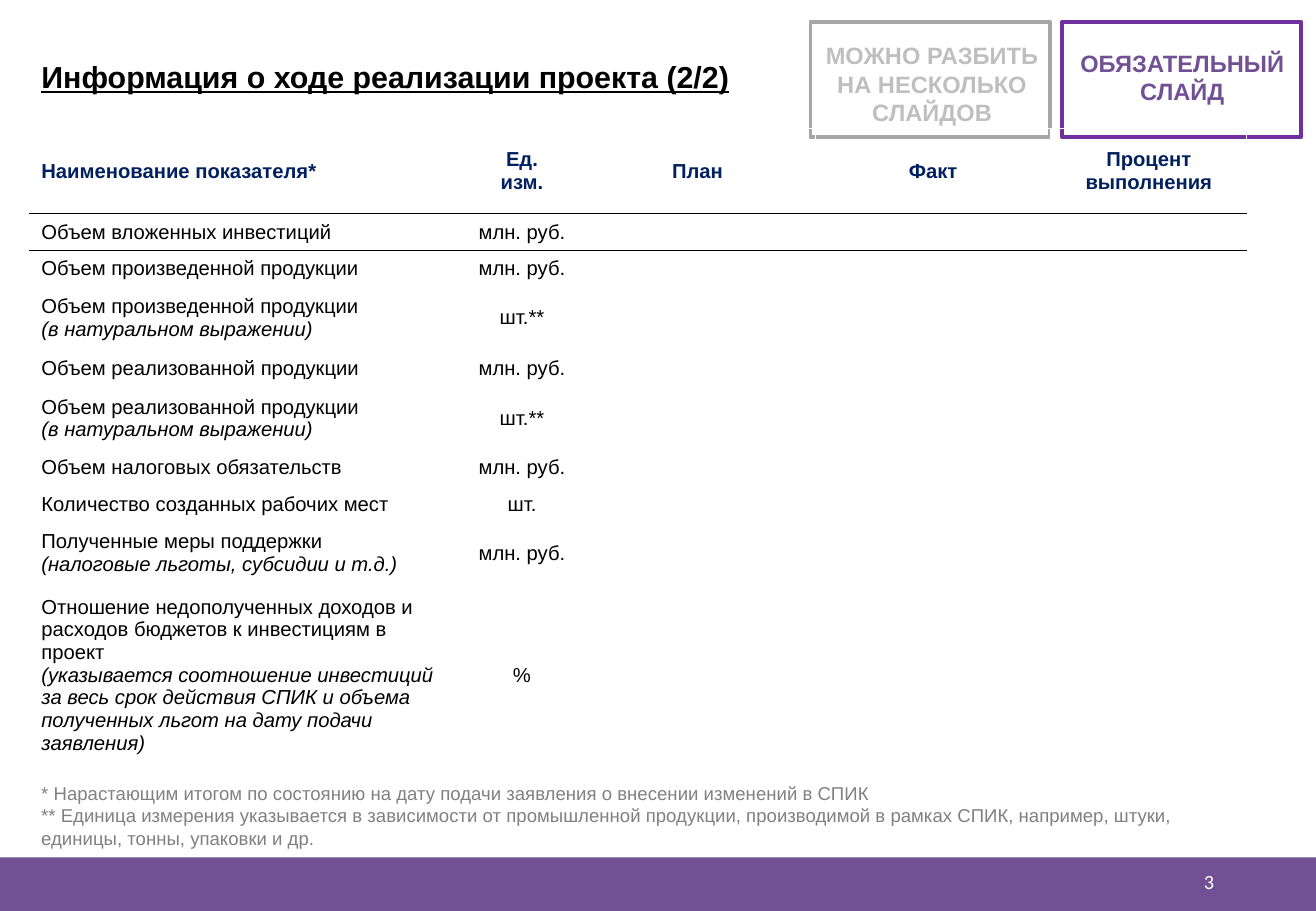
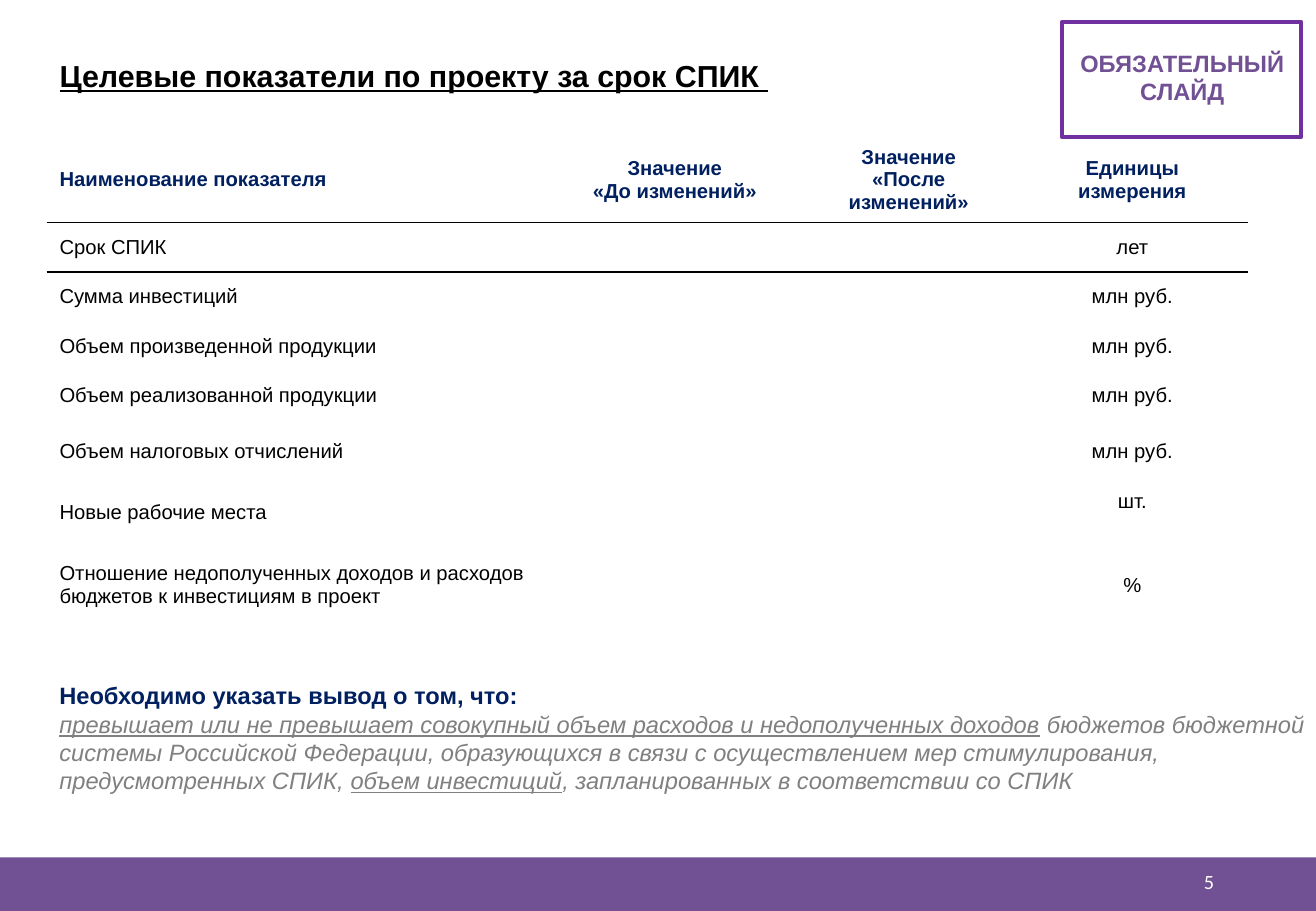
from lxml import etree
from pptx import Presentation
from pptx.dml.color import RGBColor
from pptx.enum.shapes import MSO_SHAPE as Shape
from pptx.enum.text import MSO_ANCHOR as Anchor, MSO_AUTO_SIZE as Fit, PP_ALIGN as Align
from pptx.oxml.ns import qn
from pptx.util import Inches, Pt

PURPLE, NAVY, BLACK, GREY = "725094", "002060", "000000", "808080"
BASE = {"name": "Arial", "size": Pt(12), "bold": False, "italic": False, "underline": False}
HEAD = {"bold": True, "color": NAVY}


def tint(code):
    return RGBColor.from_string(code)


class Deck:
    """Holds the style and the current slide; lengths are percents of its size."""

    def __init__(self):
        self.file = Presentation()
        self.file.slide_width, self.file.slide_height = Inches(10.83), Inches(7.5)
        self.page = None

    def wide(self, part):
        return round(self.file.slide_width * part / 100)

    def high(self, part):
        return round(self.file.slide_height * part / 100)

    def area(self, x, y, w, h):
        return self.wide(x), self.high(y), self.wide(w), self.high(h)

    def put(self, frame, paras, align=Align.LEFT, **style):
        """Each paragraph is a string or a list of (text, style) runs."""
        for i, para in enumerate(paras):
            line = frame.add_paragraph() if i else frame.paragraphs[0]
            line.alignment = align
            runs = [(para, {})] if isinstance(para, str) else para
            for text, extra in runs:
                look = {**BASE, "color": BLACK, **style, **extra}
                run = line.add_run()
                run.text = text
                run.font.color.rgb = tint(look.pop("color"))
                for key, value in look.items():
                    setattr(run.font, key, value)

    def box(self, at, fill=None, edge=None):
        shape = self.page.shapes.add_shape(Shape.RECTANGLE, *self.area(*at))
        shape.shadow.inherit = False
        if fill:
            shape.fill.solid()
            shape.fill.fore_color.rgb = tint(fill)
        else:
            shape.fill.background()
        if edge:
            shape.line.color.rgb = tint(edge)
            shape.line.width = Pt(2.25)
        else:
            shape.line.fill.background()

    def text(self, at, paras, align=Align.LEFT, wrap=True, anchor=Anchor.TOP, **style):
        frame = self.page.shapes.add_textbox(*self.area(*at)).text_frame
        frame.word_wrap, frame.vertical_anchor = wrap, anchor
        self.put(frame, paras, align, **style)
        return frame

    def slide(self, title, at, number):
        """Start a slide with its title, footer band and page number."""
        self.page = self.file.slides.add_slide(self.file.slide_layouts[5])
        self.box((0, 94.13, 100, 5.87), fill=PURPLE)
        self.text((70.64, 94.13, 22.53, 5.33), [str(number)], Align.RIGHT,
                  anchor=Anchor.MIDDLE, name="Calibri", color="FFFFFF")
        head = self.page.shapes.title
        head.left, head.top, head.width, head.height = self.area(*at)
        frame = head.text_frame
        frame.auto_size, frame.word_wrap, frame.vertical_anchor = Fit.NONE, True, Anchor.TOP
        self.put(frame, [title], size=Pt(18), bold=True, underline=True)

    def tag(self, x, edge, at, paras, color, wrap):
        self.box((x, 2.4, 18.19, 12.67), edge=edge)
        self.text(at, paras, Align.CENTER, wrap, size=Pt(14), bold=True, color=color)

    def must(self):
        self.tag(80.7, "7030A0", (81.07, 4.67, 17.54, 7.6),
                 ["ОБЯЗАТЕЛЬНЫЙ", "СЛАЙД"], PURPLE, False)

    def rule(self, cell, sides):
        """Draw black borders; sides are given in schema order."""
        for i, side in enumerate(sides):
            line = etree.Element(qn("a:ln" + side), w=str(Pt(1)))
            fill = etree.SubElement(line, qn("a:solidFill"))
            etree.SubElement(fill, qn("a:srgbClr"), val=BLACK)
            cell._tc.get_or_add_tcPr().insert(i, line)

    def table(self, x, y, cols, rows, data):
        """In a cell, | parts paragraphs; those in brackets are italic."""
        at = self.area(x, y, sum(cols), sum(rows))
        grid = self.page.shapes.add_table(len(rows), len(cols), *at).table
        grid.first_row = grid.horz_banding = False
        for col, part in zip(grid.columns, cols):
            col.width = self.wide(part)
        for row, part in zip(grid.rows, rows):
            row.height = self.high(part)
        borders = {0: ["B"], 1: ["T", "B"], 2: ["T"]}
        for r, line in enumerate(data):
            for c, words in enumerate(line):
                cell = grid.cell(r, c)
                cell.vertical_anchor = Anchor.MIDDLE
                cell.fill.background()
                self.rule(cell, borders.get(r, []))
                if not words:
                    end = cell.text_frame.paragraphs[0]._p
                    etree.SubElement(end, qn("a:endParaRPr"), sz="1200")
                    continue
                paras = [[(p, {"italic": p.startswith("(")})] for p in words.split("|")]
                self.put(cell.text_frame, paras, Align.CENTER if c else Align.LEFT,
                         **({} if r else HEAD))
        return grid


def progress(deck):
    deck.slide("Информация о ходе реализации проекта (2/2)", (2.22, 5.73, 81.53, 5.33), 3)
    deck.must()
    deck.tag(61.59, "A6A6A6", (61.59, 3.87, 18.47, 10.8),
             ["МОЖНО РАЗБИТЬ НА НЕСКОЛЬКО СЛАЙДОВ"], "BFBFBF", True)
    deck.text((2.22, 85.2, 92.34, 8.8), [
        "* Нарастающим итогом по состоянию на дату подачи заявления о внесении изменений в СПИК",
        "** Единица измерения указывается в зависимости от промышленной продукции, "
        "производимой в рамках СПИК, например, штуки, единицы, тонны, упаковки и др.",
    ], size=Pt(11), color=GREY)
    # Indicators and their units; the plan and fact columns stay open
    items = [
        ("Объем вложенных инвестиций", "млн. руб."),
        ("Объем произведенной продукции", "млн. руб."),
        ("Объем произведенной продукции|(в натуральном выражении)", "шт.**"),
        ("Объем реализованной продукции", "млн. руб."),
        ("Объем реализованной продукции|(в натуральном выражении)", "шт.**"),
        ("Объем налоговых обязательств", "млн. руб."),
        ("Количество созданных рабочих мест", "шт."),
        ("Полученные меры поддержки|(налоговые льготы, субсидии и т.д.)", "млн. руб."),
        ("Отношение недополученных доходов и расходов бюджетов к инвестициям в проект|"
         "(указывается соотношение инвестиций за весь срок действия СПИК и объема "
         "полученных льгот на дату подачи заявления)", "%"),
    ]
    head = ("Наименование показателя*", "Ед.|изм.", "План", "Факт", "Процент выполнения")
    deck.table(2.22, 14.13, [33.06, 8.77, 17.91, 17.91, 14.87],
               [9.33, 4.03, 4.03, 6.73, 4.3, 6.77, 4, 4, 6.77, 19.7],
               [head] + [(*item, "", "", "") for item in items])


def targets(deck):
    deck.slide("Целевые показатели по проекту за срок СПИК ", (3.6, 5.6, 68.98, 5.33), 5)
    # Indicators and their units; the value columns stay open
    items = [
        ("Срок СПИК", "лет"),
        ("Сумма инвестиций", "млн руб."),
        ("Объем произведенной продукции", "млн руб."),
        ("Объем реализованной продукции", "млн руб."),
        ("Объем налоговых отчислений", "млн руб."),
        ("Новые рабочие места", "шт."),
        ("Отношение недополученных доходов и расходов бюджетов к инвестициям в проект", "%"),
    ]
    head = ("Наименование показателя", "Значение|«До изменений»",
            "Значение|«После изменений»", "Единицы измерения")
    grid = deck.table(3.6, 15.07, [38.13, 19.11, 16.44, 17.54],
                      [9.27] + [5.44] * 4 + [6.73, 6.67, 9.33],
                      [head] + [(name, "", "", unit) for name, unit in items])
    grid.cell(6, 3).margin_bottom = Inches(0.23)
    deck.must()
    # Conclusion
    line = {"underline": True}
    frame = deck.text((3.6, 74.13, 96.58, 13.87), [
        [("Необходимо указать вывод о том, что:", {**HEAD, "italic": False})],
        [("превышает или не превышает совокупный объем расходов и недополученных доходов", line),
         (" бюджетов бюджетной системы Российской Федерации, образующихся в связи с "
          "осуществлением мер стимулирования, предусмотренных СПИК, ", {}),
         ("объем инвестиций", line),
         (", запланированных в соответствии со СПИК", {})],
    ], size=Pt(14), italic=True, color=GREY)
    frame.paragraphs[1].space_after = Pt(12)


def main():
    deck = Deck()
    progress(deck)
    targets(deck)
    deck.file.save("out.pptx")


if __name__ == "__main__":
    main()
